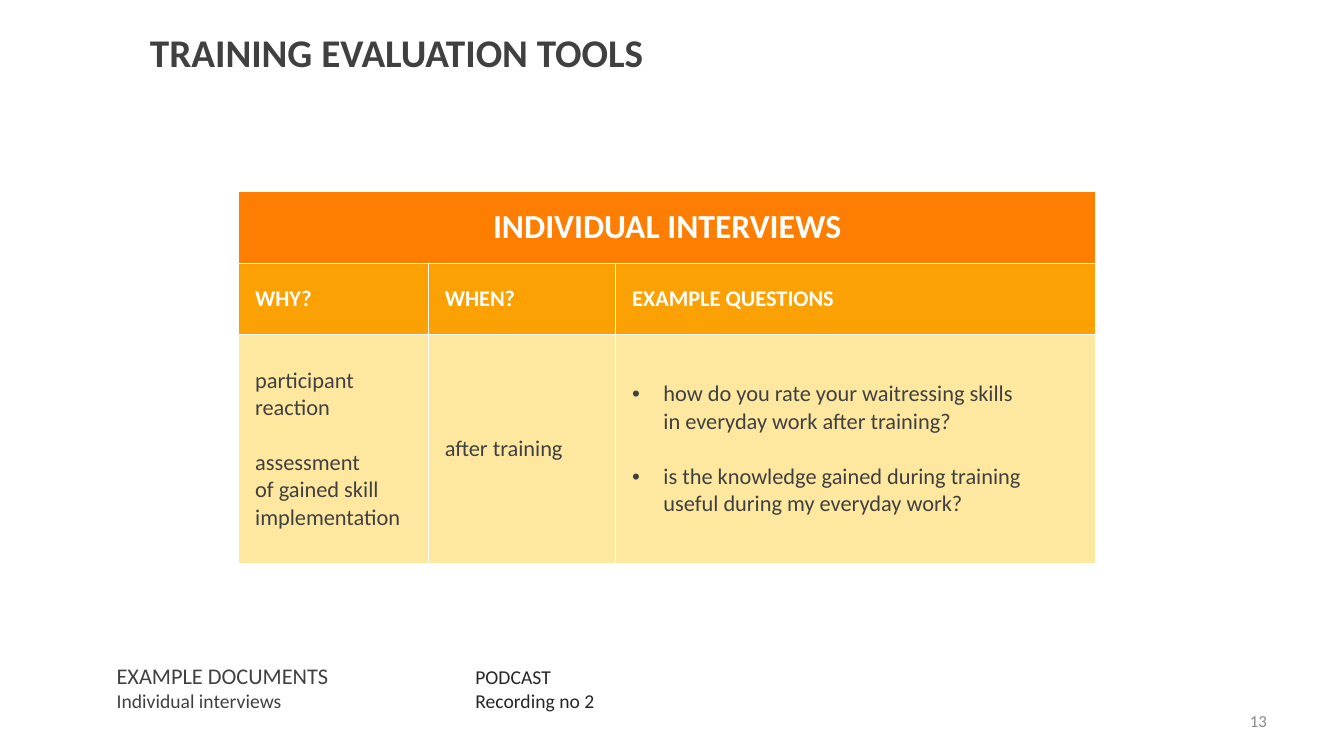
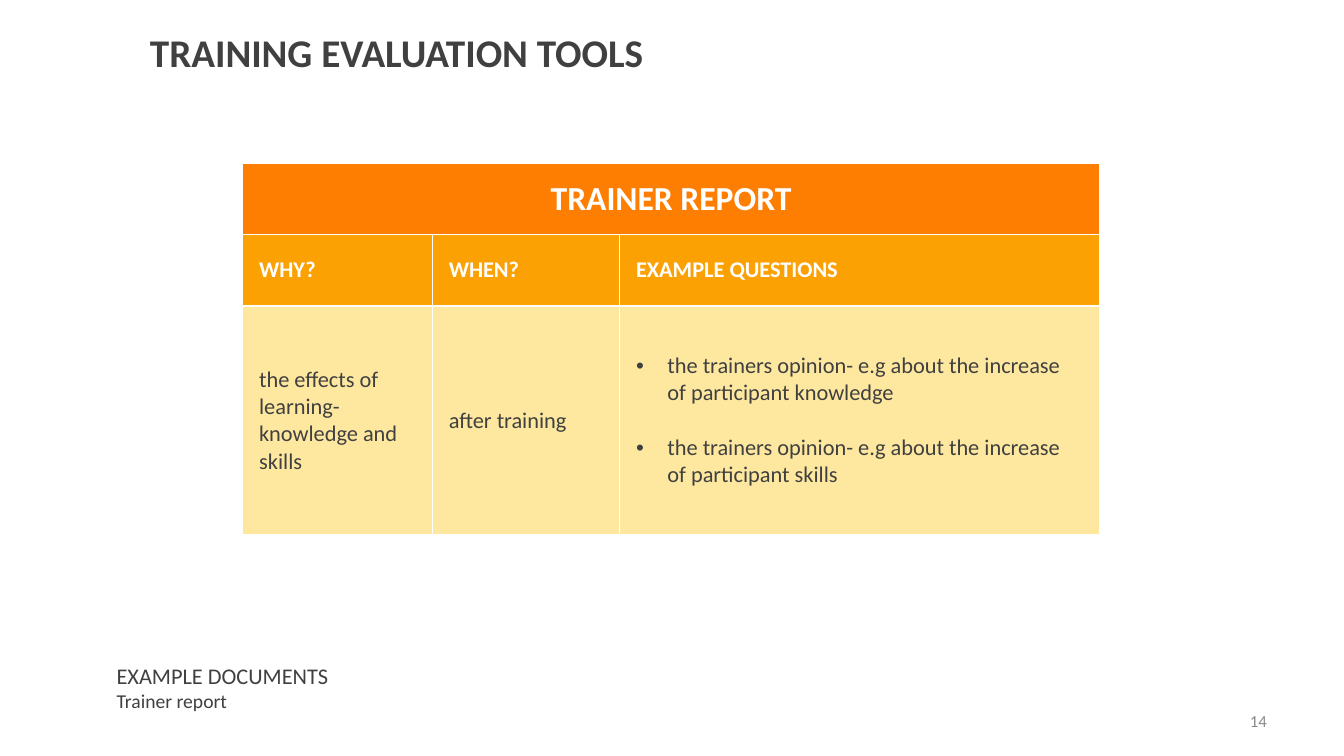
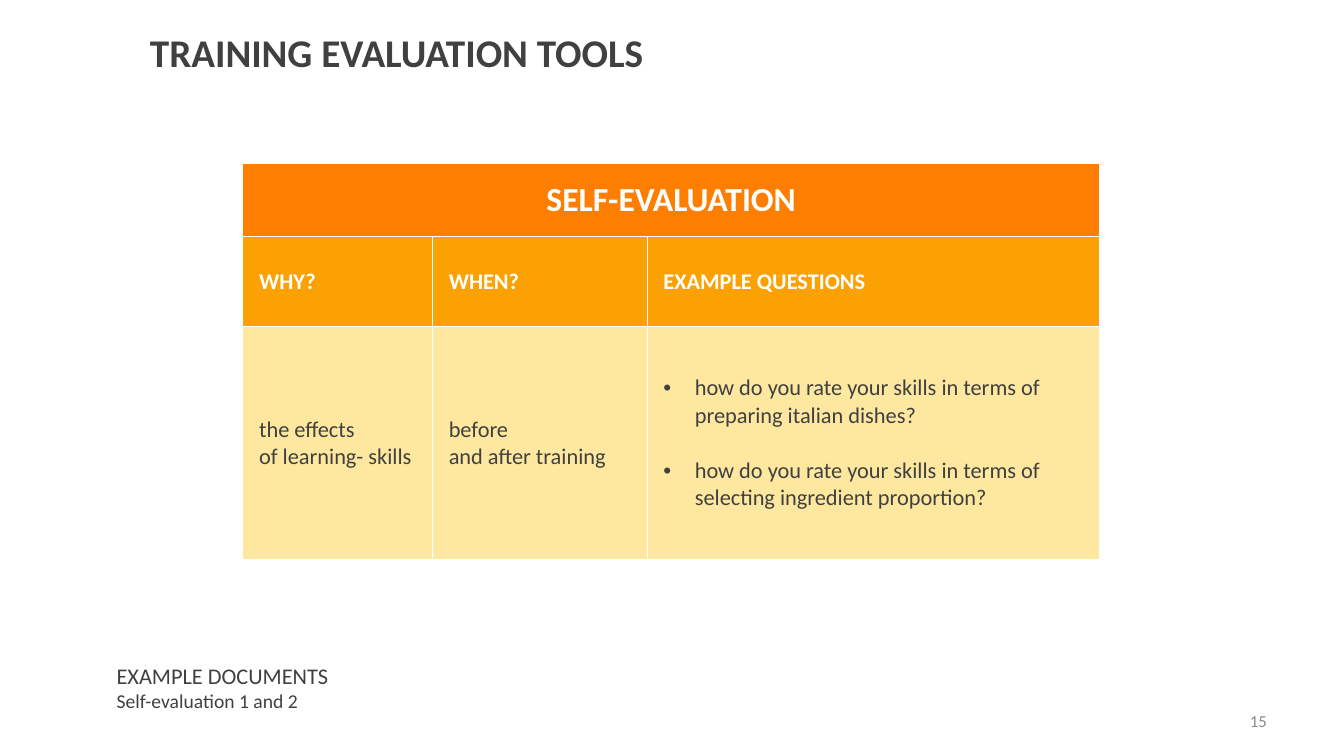
from lxml import etree
from pptx import Presentation
from pptx.dml.color import RGBColor
from pptx.enum.text import MSO_ANCHOR, PP_ALIGN
from pptx.oxml.ns import qn
from pptx.util import Cm, Pt

FONT = "Calibri"
COLORS = {
    "text": "404040",
    "dark": "262626",
    "number": "898989",
    "white": "FFFFFF",
    "title_row": "FE7E01",
    "head_row": "FBA103",
    "body_row": "FEE8A0",
}
HEADS = ["WHY?", "WHEN?", "EXAMPLE QUESTIONS"]
INSET = 0.41
BULLET_INDENT = 0.79
LINE_GAP = 19.5

# "\v" marks a line break inside a paragraph
SLIDES = [
    dict(number=13, name="INDIVIDUAL INTERVIEWS", document="Individual interviews",
         podcast="Recording no 2", at=(6.02, 4.83),
         cols=(4.78, 4.72, 12.09), rows=(1.8, 1.8, 5.77),
         why=["participant reaction", "assessment\vof gained skill implementation"],
         when=["after training"],
         questions=["how do you rate your waitressing skills\vin everyday work after training?",
                    "is the knowledge gained during training useful during my everyday work?"]),
    dict(number=14, name="TRAINER REPORT", document="Trainer report",
         at=(6.12, 4.11), cols=(4.78, 4.72, 12.09), rows=(1.8, 1.8, 5.77),
         why=["the effects of learning- knowledge and skills"],
         when=["after training"],
         questions=["the trainers opinion- e.g about the increase of participant knowledge",
                    "the trainers opinion- e.g about the increase of participant skills"]),
    dict(number=15, name="SELF-EVALUATION", document="Self-evaluation 1 and 2",
         at=(6.12, 4.11), cols=(4.78, 5.41, 11.4), rows=(1.85, 2.26, 5.89),
         why=["the effects\vof learning- skills"],
         when=["before\vand after training"],
         questions=["how do you rate your skills in terms of preparing italian dishes?",
                    "how do you rate your skills in terms of selecting ingredient proportion?"]),
]


def rgb(name):
    return RGBColor.from_string(COLORS[name])


def add_bullet(p):
    pPr = p._p.get_or_add_pPr()
    pPr.set("marL", str(Cm(BULLET_INDENT)))
    pPr.set("indent", str(-Cm(BULLET_INDENT)))
    etree.SubElement(pPr, qn("a:buFont")).set("typeface", "Arial")
    etree.SubElement(pPr, qn("a:buChar")).set("char", "•")


def write(tf, lines, sizes=(16,), color="text", bold=False,
          align=PP_ALIGN.LEFT, gap=0, bullet=False):
    """Write one paragraph per line; the last size holds for the rest."""
    for i, line in enumerate(lines):
        p = tf.paragraphs[0] if i == 0 else tf.add_paragraph()
        p.text = line
        p.alignment = align
        if i and gap:
            p.space_before = Pt(gap)
        if bullet:
            add_bullet(p)
        for r in p.runs:
            r.font.name = FONT
            r.font.size = Pt(sizes[min(i, len(sizes) - 1)])
            r.font.bold = bold
            r.font.color.rgb = rgb(color)


def add_text(slide, box, lines, anchor=MSO_ANCHOR.TOP, **style):
    tf = slide.shapes.add_textbox(*(Cm(v) for v in box)).text_frame
    tf.word_wrap = True
    tf.vertical_anchor = anchor
    write(tf, lines, **style)


def add_borders(cell):
    tcPr = cell._tc.get_or_add_tcPr()
    for i, side in enumerate(("lnL", "lnR", "lnT", "lnB")):
        ln = etree.Element(qn(f"a:{side}"), w=str(Pt(1)))
        fill = etree.SubElement(ln, qn("a:solidFill"))
        etree.SubElement(fill, qn("a:srgbClr")).set("val", COLORS["white"])
        tcPr.insert(i, ln)


def fill_cell(cell, lines, fill, inset=INSET, **style):
    cell.fill.solid()
    cell.fill.fore_color.rgb = rgb(fill)
    cell.vertical_anchor = MSO_ANCHOR.MIDDLE
    cell.margin_left = cell.margin_right = Cm(INSET)
    cell.margin_top = cell.margin_bottom = Cm(inset)
    write(cell.text_frame, lines, **style)


def add_tool_table(slide, x, y, tool):
    cols, rows = tool["cols"], tool["rows"]
    table = slide.shapes.add_table(
        len(rows), len(cols), Cm(x), Cm(y), Cm(sum(cols)), Cm(sum(rows))).table
    table.first_row = table.horz_banding = False
    for col, width in zip(table.columns, cols):
        col.width = Cm(width)
    for row, height in zip(table.rows, rows):
        row.height = Cm(height)

    # Title row across all columns
    title = table.cell(0, 0)
    title.merge(table.cell(0, len(cols) - 1))
    fill_cell(title, [tool["name"]], "title_row", inset=0.13, sizes=(24,),
              color="white", bold=True, align=PP_ALIGN.CENTER)

    # Headings and contents
    for i, key in enumerate(("why", "when", "questions")):
        fill_cell(table.cell(1, i), [HEADS[i]], "head_row", color="white", bold=True)
        fill_cell(table.cell(2, i), tool[key], "body_row",
                  gap=LINE_GAP, bullet=key == "questions")
    for cell in table.iter_cells():
        add_borders(cell)


def add_frame(slide, number):
    add_text(slide, (3.53, 0.53, 24, 1.57), ["TRAINING EVALUATION TOOLS"],
             anchor=MSO_ANCHOR.MIDDLE, sizes=(28,), bold=True)
    add_text(slide, (24.28, 17.65, 7.9, 1.02), [str(number)],
             anchor=MSO_ANCHOR.MIDDLE, sizes=(12,), color="number",
             align=PP_ALIGN.RIGHT)


def add_references(slide, x, y, tool):
    add_text(slide, (x, y, 6.2, 1.55), ["EXAMPLE DOCUMENTS", tool["document"]],
             sizes=(16, 14))
    if "podcast" in tool:
        add_text(slide, (x + 9.04, y + 0.08, 4, 1.45), ["PODCAST", tool["podcast"]],
                 sizes=(14,), color="dark")


def main():
    prs = Presentation()
    prs.slide_width, prs.slide_height = Cm(33.87), Cm(19.05)
    for tool in SLIDES:
        slide = prs.slides.add_slide(prs.slide_layouts[6])
        add_frame(slide, tool["number"])
        add_references(slide, 2.69, 16.56, tool)
        add_tool_table(slide, *tool["at"], tool)
    prs.save("out.pptx")


if __name__ == "__main__":
    main()
